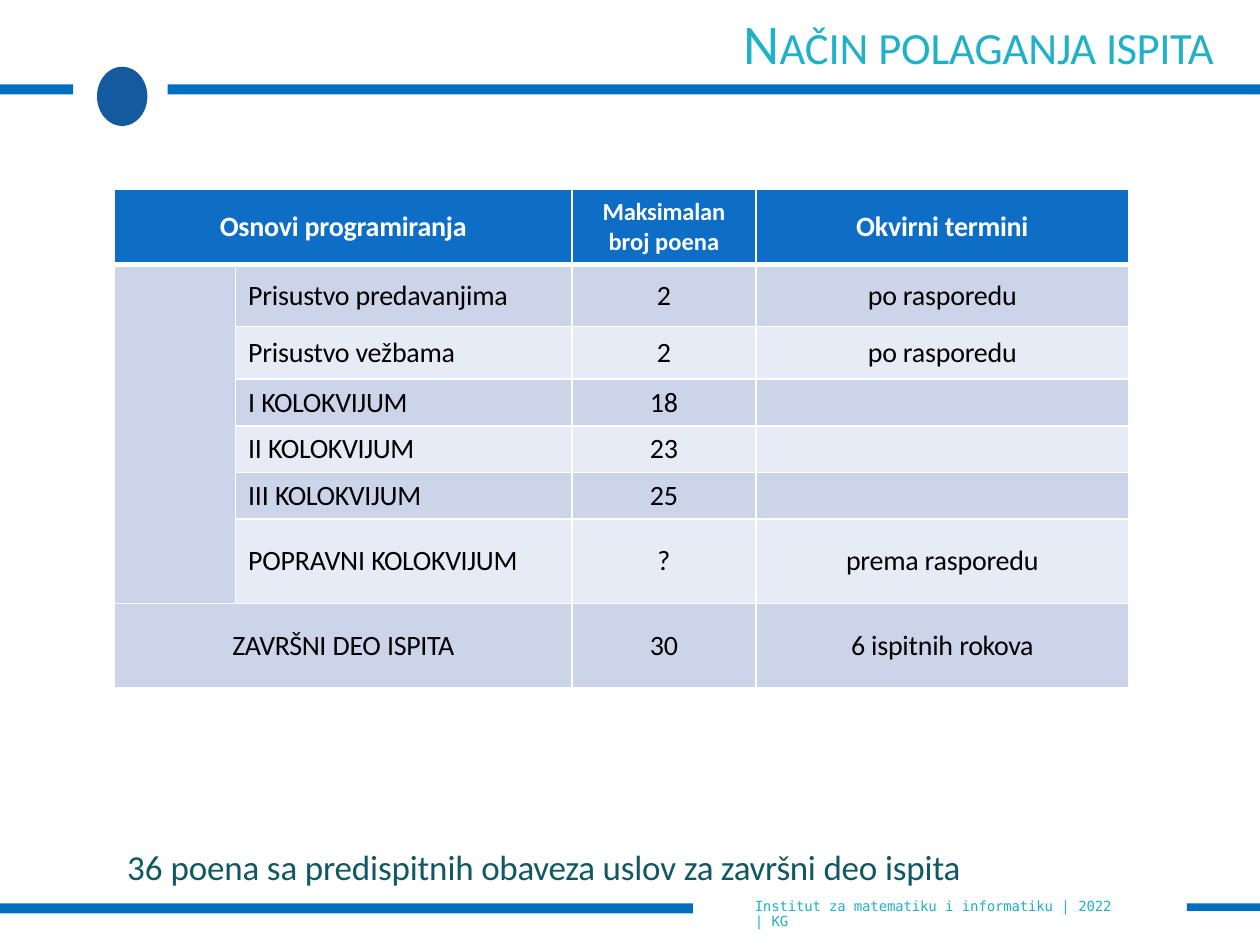
from lxml.etree import SubElement
from pptx import Presentation
from pptx.dml.color import RGBColor
from pptx.enum.shapes import MSO_SHAPE as Shape
from pptx.enum.text import MSO_ANCHOR as Anchor, PP_ALIGN as Align
from pptx.oxml.ns import qn
from pptx.util import Inches, Pt

BLUE, HEADER_BLUE, TEAL, DARK_TEAL = "006FC0", "0E6EC5", "20B1C8", "115863"
BLACK, WHITE, BAND_DARK, BAND_LIGHT = "000000", "FFFFFF", "CCD4EA", "E7EBF5"

BARS = [(1.33, 0.67, 8.67, 0.08), (0, 0.67, 0.58, 0.08),
        (0, 7.17, 5.5, 0.08), (9.42, 7.17, 0.58, 0.06)]
COLUMN_WIDTHS = [0.96, 2.67, 1.46, 2.96]
ROW_HEIGHTS = [0.6, 0.49, 0.42, 0.37, 0.37, 0.37, 0.67, 0.67]

# Each cell is a list of (text, letter spacing in points) runs.
HEADER = [[("Osnovi programiranja", -0.1)], None,
          [("Maksimalan", -0.1), ("\n", 0), ("broj poena", 0)],
          [("Okvirni termini", -0.1)]]
TERM = [("po rasporedu", -0.1)]
TEST = ("KOLOKVIJUM", -0.2)
ROWS = [
    [None, [("Prisustvo predavanjima", -0.1)], [("2", 0)], TERM],
    [None, [("Prisustvo vežbama", -0.1)], [("2", 0)], TERM],
    [None, [("I ", -0.1), TEST], [("18", -0.1)], None],
    [None, [("II ", -0.1), TEST], [("23", -0.1)], None],
    [None, [("III ", -0.1), TEST], [("25", -0.1)], None],
    [None, [("POPRAVNI ", -0.1), TEST], [("?", 0)], [("prema rasporedu", -0.1)]],
    [[("ZAVRŠNI ", -0.2), ("DEO ", -0.1), ("ISPITA", -0.2)], None,
     [("30", -0.1)], [("6 ispitnih ", -0.1), ("rokova", -0.2)]],
]


def color(hex_value):
    return RGBColor.from_string(hex_value)


def add_run(paragraph, text, size, hex_color, spacing=0, name="Calibri", bold=False):
    run = paragraph.add_run()
    run.text = text
    font = run.font
    font.size, font.name, font.bold = Pt(size), name, bold
    font.color.rgb = color(hex_color)
    run._r.get_or_add_rPr().set("spc", str(round(spacing * 100)))


def clear_margins(text_frame, top=0.0):
    text_frame.margin_left = text_frame.margin_right = text_frame.margin_bottom = 0
    text_frame.margin_top = Inches(top)
    text_frame.word_wrap = True
    text_frame.vertical_anchor = Anchor.TOP


def add_shape(slide, kind, box, fill):
    shape = slide.shapes.add_shape(kind, *map(Inches, box))
    shape.shadow.inherit = False
    shape.fill.solid()
    shape.fill.fore_color.rgb = color(fill)
    shape.line.fill.background()


def add_text(slide, box, runs, size, hex_color, name="Calibri", top=0.0):
    text_frame = slide.shapes.add_textbox(*map(Inches, box)).text_frame
    clear_margins(text_frame, top)
    paragraph = text_frame.paragraphs[0]
    for text, spacing in runs:
        add_run(paragraph, text, size, hex_color, spacing, name)
    return paragraph


def set_title(slide):
    title = slide.shapes.title
    title.left, title.top, title.width, title.height = map(Inches, (5.9, 0.04, 3.85, 0.56))
    clear_margins(title.text_frame, 0.03)
    paragraph = title.text_frame.paragraphs[0]
    paragraph.alignment = Align.LEFT
    paragraph.line_spacing = 1.0
    for text, size, spacing in [("N", 32, -0.1), ("AČIN POLAGANJA ", 25.5, -0.1),
                                ("ISPITA", 25.5, -0.3)]:
        add_run(paragraph, text, size, TEAL, spacing)


def set_borders(cell, widths):
    """Draw white borders; widths maps a side (L, R, T, B) to points."""
    properties = cell._tc.get_or_add_tcPr()
    for side, width in widths.items():
        line = SubElement(properties, qn(f"a:ln{side}"), w=str(Pt(width)))
        fill = SubElement(line, qn("a:solidFill"))
        SubElement(fill, qn("a:srgbClr"), val=WHITE)


def fill_cell(cell, runs, fill, size, text_color, bold, alignment):
    cell.fill.solid()
    cell.fill.fore_color.rgb = color(fill)
    cell.vertical_anchor = Anchor.MIDDLE
    cell.margin_left = Inches(0.1 if alignment == Align.LEFT else 0)
    cell.margin_right = cell.margin_top = cell.margin_bottom = 0
    paragraph = cell.text_frame.paragraphs[0]
    paragraph.alignment = alignment
    for text, spacing in runs or []:
        if text == "\n":
            paragraph = cell.text_frame.add_paragraph()
            paragraph.alignment = alignment
        else:
            add_run(paragraph, text, size, text_color, spacing, bold=bold)


def add_points_table(slide):
    frame = slide.shapes.add_table(
        len(ROW_HEIGHTS), len(COLUMN_WIDTHS), Inches(0.91), Inches(1.5),
        Inches(sum(COLUMN_WIDTHS)), Inches(sum(ROW_HEIGHTS)))
    table = frame.table
    table.first_row = table.horz_banding = False
    for column, width in zip(table.columns, COLUMN_WIDTHS):
        column.width = Inches(width)
    for row, height in zip(table.rows, ROW_HEIGHTS):
        row.height = Inches(height)

    last = len(ROWS)
    table.cell(0, 0).merge(table.cell(0, 1))
    table.cell(1, 0).merge(table.cell(last - 1, 0))
    table.cell(last, 0).merge(table.cell(last, 1))

    for row, contents in enumerate([HEADER] + ROWS):
        is_header = row == 0
        for column, runs in enumerate(contents):
            cell = table.cell(row, column)
            set_borders(cell, {"L": 1, "R": 1, "T": 3 if row == 1 else 1,
                               "B": 3 if is_header else 1})
            band = BAND_DARK if row % 2 or column == 0 else BAND_LIGHT
            fill_cell(cell, runs,
                      fill=HEADER_BLUE if is_header else band,
                      size=14 if is_header and column == 2 else 16,
                      text_color=WHITE if is_header else BLACK,
                      bold=is_header,
                      alignment=Align.LEFT if column == 1 else Align.CENTER)


def main():
    presentation = Presentation()
    presentation.slide_width, presentation.slide_height = Inches(10), Inches(7.5)
    slide = presentation.slides.add_slide(presentation.slide_layouts[5])

    add_shape(slide, Shape.OVAL, (0.77, 0.53, 0.4, 0.47), "135A9F")
    for bar in BARS:
        add_shape(slide, Shape.RECTANGLE, bar, BLUE)
    set_title(slide)
    footer = add_text(
        slide, (5.99, 7.14, 2.95, 0.14),
        [("Institut za matematiku ", -0.1), ("i", 0), (" informatiku ", -0.1),
         ("| ", 0), ("2022 ", -0.1), ("| ", 0), ("KG", -0.1)],
        8, TEAL, "DejaVu Sans Mono")
    footer.line_spacing = Pt(8.6)
    add_points_table(slide)
    add_text(
        slide, (1.01, 6.69, 6.73, 0.36),
        [("36 ", 0), ("poena sa predispitnih ", -0.1), ("obaveza ", -0.2),
         ("uslov ", -0.1), ("za završni ", -0.2), ("deo ispita", -0.1)],
        20, DARK_TEAL, top=0.02)
    presentation.save("out.pptx")


if __name__ == "__main__":
    main()
